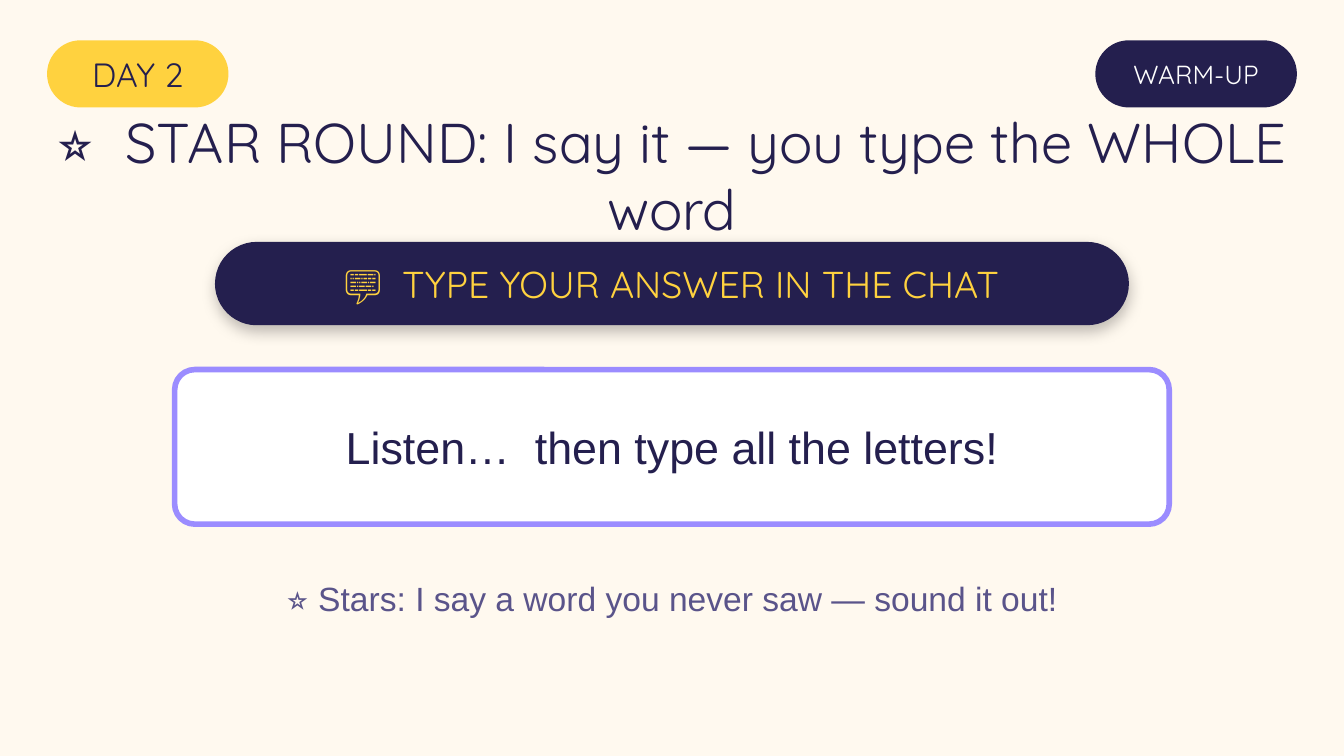
from lxml.etree import SubElement as Sub
from pptx import Presentation
from pptx.dml.color import RGBColor
from pptx.enum.shapes import MSO_SHAPE as Form
from pptx.enum.text import MSO_ANCHOR as Anchor, MSO_AUTO_SIZE as Fit, PP_ALIGN as Align
from pptx.oxml.ns import qn
from pptx.util import Inches, Pt

NAVY = RGBColor(0x24, 0x1F, 0x4E)
GOLD = RGBColor(0xFF, 0xD2, 0x3F)
LILAC = RGBColor(0x9B, 0x8C, 0xFF)
MUTED = RGBColor(0x5A, 0x54, 0x8A)
CREAM = RGBColor(0xFF, 0xF9, 0xEF)
WHITE = RGBColor(0xFF, 0xFF, 0xFF)
HEAD, BODY = "Quicksand", "Arial"
WIDE, EDGE = 10, 0.35
HIGH = WIDE * 9 / 16

# Content: words, font, size, colour
DAY = ("DAY 2", HEAD, 18, NAVY)
STAGE = ("WARM-UP", HEAD, 14, WHITE)
TITLE = ("⭐  STAR ROUND: I say it — you type the WHOLE word", HEAD, 30, NAVY)
CHAT = ("💬  TYPE YOUR ANSWER IN THE CHAT", HEAD, 20, GOLD)
TASK = ("Listen…  then type all the letters!", BODY, 24, NAVY)
HINT = ("⭐ Stars: I say a word you never saw — sound it out!", BODY, 18, MUTED)


def center(wide):
    return (WIDE - wide) / 2


def place(*box):
    return [Inches(n) for n in box]


def write(shape, text, pad=True):
    words, face, size, color = text
    frame = shape.text_frame
    frame.word_wrap = True
    frame.auto_size = Fit.NONE
    frame.vertical_anchor = Anchor.MIDDLE
    if not pad:
        frame.margin_left = frame.margin_right = 0
        frame.margin_top = frame.margin_bottom = 0
    para = frame.paragraphs[0]
    para.alignment = Align.CENTER
    run = para.add_run()
    run.text = words
    run.font.name, run.font.size = face, Pt(size)
    run.font.color.rgb = color


def panel(box, fill, text, curve=0.5, line=None):
    shape = slide.shapes.add_shape(Form.ROUNDED_RECTANGLE, *place(*box))
    shape.adjustments[0] = curve
    shape.shadow.inherit = False
    shape.fill.solid()
    shape.fill.fore_color.rgb = fill
    if line:
        shape.line.color.rgb = line
        shape.line.width = Pt(3)
    else:
        shape.line.fill.background()
    write(shape, text, pad=False)
    return shape


def shade(shape):
    group = shape._element.spPr.find(qn("a:effectLst"))
    drop = Sub(group, qn("a:outerShdw"), blurRad=str(Pt(8)), dist=str(Pt(3)),
               dir="5400000", algn="ctr", rotWithShape="0")
    tint = Sub(drop, qn("a:srgbClr"), val="000000")
    Sub(tint, qn("a:alpha"), val="25000")


deck = Presentation()
deck.slide_width, deck.slide_height = place(WIDE, HIGH)
slide = deck.slides.add_slide(deck.slide_layouts[5])
slide.background.fill.solid()
slide.background.fill.fore_color.rgb = CREAM

# Title across the slide
title = slide.shapes.title
title.left, title.top, title.width, title.height = place(0, 0.95, WIDE, 0.7)
write(title, TITLE)

# Corner tags
panel((EDGE, 0.3, 1.35, 0.5), GOLD, DAY)
panel((WIDE - EDGE - 1.5, 0.3, 1.5, 0.5), NAVY, STAGE)

# Chat banner and task card
shade(panel((center(6.8), 1.8, 6.8, 0.62), NAVY, CHAT))
panel((center(7.4), 2.75, 7.4, 1.15), WHITE, TASK, 0.13, LILAC)

# Hint below the card
write(slide.shapes.add_textbox(*place(0, 4.2, WIDE, 0.5)), HINT)

deck.save("out.pptx")
